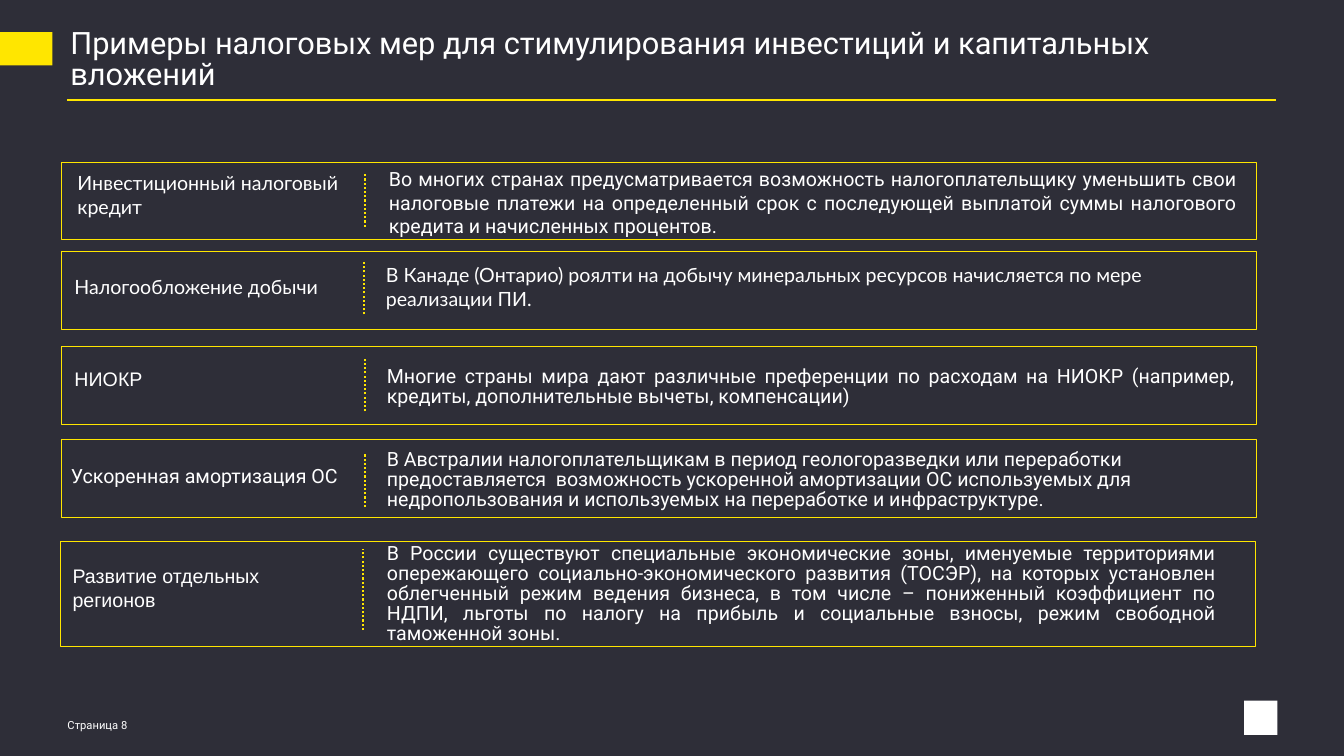
from pptx import Presentation
from pptx.dml.color import RGBColor
from pptx.enum import dml, shapes, text
from pptx.oxml.ns import qn
from pptx.util import Inches, Pt

COLORS = {"back": "2E2E38", "accent": "FFE600", "text": "FFFFFF"}
RGB = {name: RGBColor.from_string(code) for name, code in COLORS.items()}
LEFT, MID = text.PP_ALIGN.LEFT, text.PP_ALIGN.CENTER
JUST = text.PP_ALIGN.JUSTIFY
TOP, CENTER = text.MSO_ANCHOR.TOP, text.MSO_ANCHOR.MIDDLE

deck = Presentation()
deck.slide_width, deck.slide_height = Inches(13.34), Inches(7.5)
slide = deck.slides.add_slide(deck.slide_layouts[6])
slide.background.fill.solid()
slide.background.fill.fore_color.rgb = RGB["back"]


def add_text(words, place, font="Roboto", size=14, align=LEFT, anchor=TOP,
             pads=(0.06, 0.06), space=None, after=0, grow=True):
    """Add one paragraph; pads are the left and right insets in inches."""
    frame = slide.shapes.add_textbox(*map(Inches, place)).text_frame
    frame.word_wrap = True
    frame.vertical_anchor = anchor
    frame.margin_left, frame.margin_right = map(Inches, pads)
    if grow:
        frame.auto_size = text.MSO_AUTO_SIZE.SHAPE_TO_FIT_TEXT
    para = frame.paragraphs[0]
    para.text = words
    para.alignment = align
    para.line_spacing = space
    para.space_after = Pt(after)
    para.font.name, para.font.size = font, Pt(size)
    para.font.color.rgb = RGB["text"]


def add_line(start, end):
    line = slide.shapes.add_connector(
        shapes.MSO_CONNECTOR.STRAIGHT, *map(Inches, start + end))
    line.line.color.rgb = RGB["accent"]
    line.line.width = Pt(1.5)
    props = line._element.spPr
    props.append(props.makeelement(qn("a:effectLst"), {}))
    return line


# Heading
add_line((0.67, 0.99), (12.67, 0.99))
add_text("Примеры налоговых мер для стимулирования инвестиций и капитальных вложений",
         (0.6, 0.24, 12.01, 0.77), size=22, pads=(0.1, 0.1), space=0.85, grow=False)

# Plain blocks: heading marker and corner mark
for place, color in [((0, 0.32, 0.52, 0.33), "accent"),
                     ((12.35, 6.95, 0.33, 0.34), "text")]:
    block = slide.shapes.add_shape(shapes.MSO_SHAPE.RECTANGLE, *map(Inches, place))
    block.shadow.inherit = False
    block.fill.solid()
    block.fill.fore_color.rgb = RGB[color]
    block.line.fill.background()

# Each measure: frame, divider (x, top, bottom), label, detail
wide, tight = {"pads": (0.1, 0.1), "font": "Lato"}, {"space": 0.85, "after": 6}
measures = [
    ((0.61, 1.61, 11.86, 0.77), (3.62, 1.72, 2.25),
     ("Инвестиционный налоговый кредит", (0.67, 1.65, 2.96, 0.57), wide),
     ("Во многих странах предусматривается возможность налогоплательщику "
      "уменьшить свои налоговые платежи на определенный срок с последующей "
      "выплатой суммы налогового кредита и начисленных процентов.",
      (3.8, 1.61, 8.54, 0.8), {"align": JUST})),
    ((0.61, 2.5, 11.86, 0.77), (3.61, 2.59, 3.12),
     ("Налогообложение добычи", (0.64, 2.68, 2.96, 0.34), wide),
     ("В Канаде (Онтарио) роялти на добычу минеральных ресурсов начисляется "
      "по мере реализации ПИ.",
      (3.77, 2.56, 8.54, 0.57), {"font": "Lato"})),
    ((0.61, 3.44, 11.86, 0.77), (3.62, 3.54, 4.08),
     ("НИОКР", (0.68, 3.62, 2.94, 0.31), {"font": "Arial", "space": 0.9}),
     ("Многие страны мира дают различные преференции по расходам на НИОКР "
      "(например, кредиты, дополнительные вычеты, компенсации)",
      (3.78, 3.59, 8.54, 0.5), {"align": JUST, **tight})),
    ((0.61, 4.36, 11.86, 0.77), (3.62, 4.5, 5.03),
     ("Ускоренная амортизация ОС", (0.56, 4.55, 2.94, 0.33), {"align": MID}),
     ("В Австралии налогоплательщикам в период геологоразведки или переработки "
      "предоставляется  возможность ускоренной амортизации ОС используемых для "
      "недропользования и используемых на переработке и инфраструктуре.",
      (3.78, 4.42, 8.54, 0.7), tight)),
    ((0.6, 5.37, 11.86, 1.04), (3.6, 5.45, 6.25),
     ("Развитие отдельных регионов", (0.66, 5.55, 2.62, 0.57), {"font": "Arial"}),
     ("В России существуют специальные экономические зоны, именуемые "
      "территориями опережающего социально-экономического развития (ТОСЭР), "
      "на которых установлен облегченный режим ведения бизнеса, в том числе – "
      "пониженный коэффициент по НДПИ, льготы по налогу на прибыль и социальные "
      "взносы, режим свободной таможенной зоны.",
      (3.78, 5.45, 8.35, 0.9), {"align": JUST, **tight})),
]
for place, (x, top, bottom), label, detail in measures:
    box = slide.shapes.add_shape(shapes.MSO_SHAPE.RECTANGLE, *map(Inches, place))
    box.shadow.inherit = False
    box.fill.background()
    box.line.color.rgb = RGB["accent"]
    box.line.width = Pt(0.75)
    add_line((x, bottom), (x, top)).line.dash_style = dml.MSO_LINE.ROUND_DOT
    add_text(label[0], label[1], **label[2])
    add_text(detail[0], detail[1], anchor=CENTER, **detail[2])

# Footer
add_text("Страница 8", (0.67, 7.08, 0.87, 0.22), size=8, pads=(0, 0.1), grow=False)

deck.save("out.pptx")
